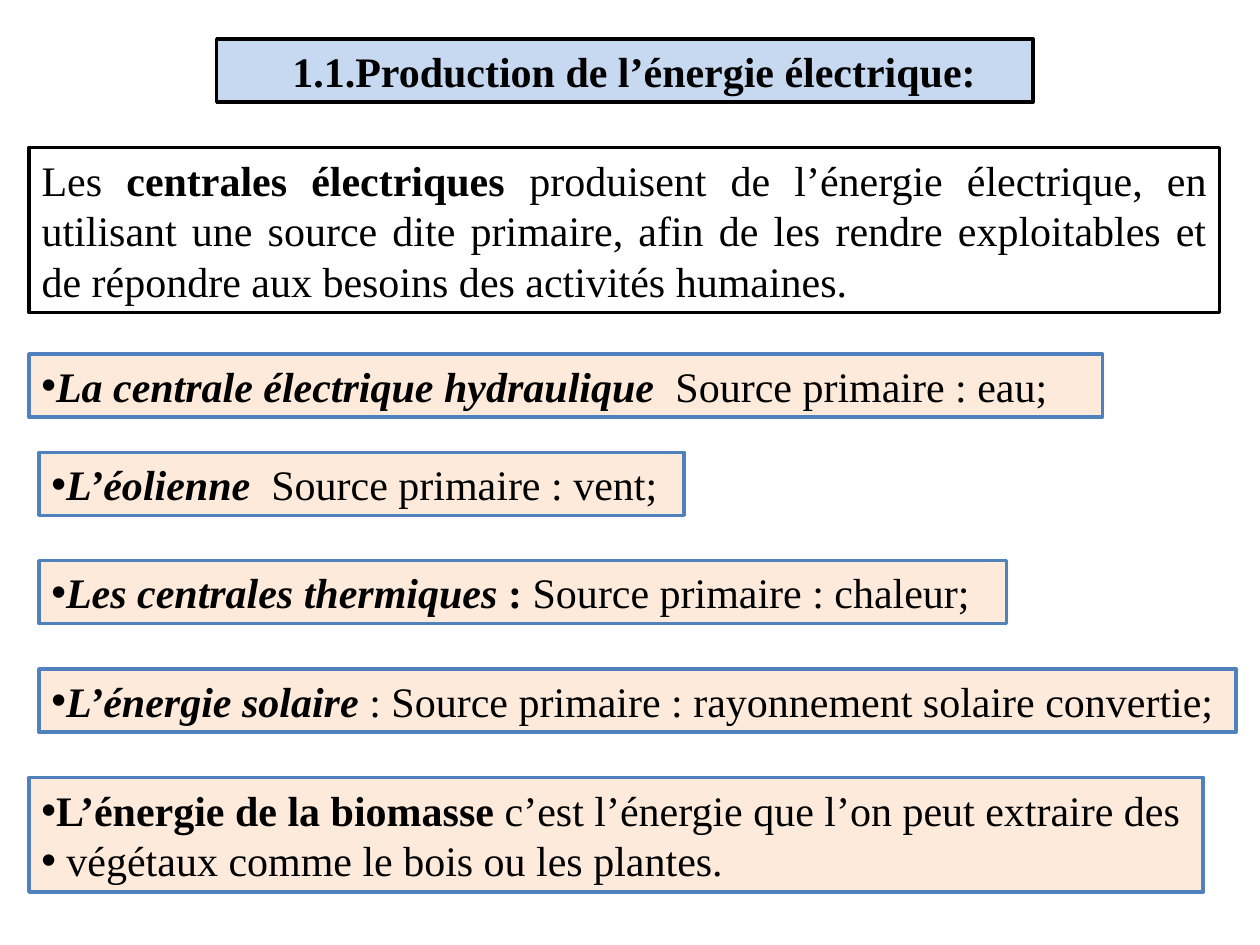
from lxml.etree import SubElement as Sub
from pptx import Presentation
from pptx.dml.color import RGBColor as RGB
from pptx.enum.text import MSO_ANCHOR as Anchor, MSO_AUTO_SIZE as Auto, PP_ALIGN as Align
from pptx.oxml.ns import qn
from pptx.util import Inches, Pt

COLORS = {"ink": "000000", "head": "C6D9F1", "paper": "FFFFFF",
          "card": "FDEADA", "edge": "4F81BD"}


class Deck:
    font, size, border = "Times New Roman", Pt(24), Pt(2)

    def __init__(self, slide):
        self.slide = slide

    def color(self, name):
        return RGB.from_string(COLORS[name])

    def frame(self, shape, box, fill, edge):
        """Place a shape and give it fill, border and text settings."""
        shape.left, shape.top, shape.width, shape.height = map(Inches, box)
        shape.fill.solid()
        shape.fill.fore_color.rgb = self.color(fill)
        shape.line.color.rgb = self.color(edge)
        shape.line.width = self.border
        text = shape.text_frame
        text.word_wrap = True
        text.auto_size = Auto.NONE
        text.vertical_anchor = Anchor.MIDDLE
        return text

    def put(self, para, runs, bullet=None, indent=0, align=Align.LEFT):
        """Fill a paragraph with (text, style) runs; style uses b and i."""
        para.alignment = align
        para.space_before = Pt(0)
        props = para._p.get_or_add_pPr()
        props.set("marL", str(Inches(indent)))
        props.set("indent", "0")
        if bullet == "•":
            Sub(props, qn("a:buFont"), typeface="Arial")
            Sub(props, qn("a:buChar"), char=bullet)
        elif bullet:
            Sub(props, qn("a:buAutoNum"), type=bullet)
        else:
            Sub(props, qn("a:buNone"))
        for words, style in runs:
            run = para.add_run()
            run.text = words
            font = run.font
            font.name, font.size = self.font, self.size
            font.bold, font.italic = "b" in style, "i" in style
            font.color.rgb = self.color("ink")

    def title(self, box, words):
        text = self.frame(self.slide.shapes.title, box, "head", "ink")
        self.put(text.paragraphs[0], [(words, "b")], "arabicPeriod", 0.5)

    def intro(self, box, runs):
        text = self.frame(self.slide.placeholders[1], box, "paper", "ink")
        self.put(text.paragraphs[0], runs, align=Align.JUSTIFY)

    def card(self, box, lines):
        shape = self.slide.shapes.add_textbox(*map(Inches, box))
        text = self.frame(shape, box, "card", "edge")
        for n, runs in enumerate(lines):
            para = text.add_paragraph() if n else text.paragraphs[0]
            self.put(para, runs, "•")


def main():
    prs = Presentation()
    prs.slide_width, prs.slide_height = Inches(10), Inches(7.5)
    deck = Deck(prs.slides.add_slide(prs.slide_layouts[1]))

    # Heading and definition
    deck.title((1.72, 0.31, 6.48, 0.5), "1.Production de l’énergie électrique:")
    deck.intro((0.23, 1.17, 9.45, 1.31), [
        ("Les ", ""), ("centrales électriques ", "b"),
        ("produisent de l’énergie électrique, en utilisant une source dite "
         "primaire, afin de les rendre exploitables et de répondre aux "
         "besoins des activités humaines.", "")])

    # Kinds of power station
    cards = [
        ((0.23, 2.81, 8.52, 0.5), [[("La centrale électrique hydraulique", "bi"),
                                    ("  Source primaire : eau;", "")]]),
        ((0.31, 3.59, 5.12, 0.5), [[("L’éolienne", "bi"),
                                    ("  Source primaire : vent;", "")]]),
        ((0.31, 4.45, 7.68, 0.5), [[("Les centrales thermiques", "bi"), (" : ", "b"),
                                    ("Source primaire : chaleur;", "")]]),
        ((0.31, 5.31, 9.5, 0.5), [[("L’énergie solaire ", "bi"),
                                   (": Source primaire : rayonnement solaire convertie;", "")]]),
        ((0.23, 6.17, 9.32, 0.91), [[("L’énergie de la biomasse", "b"),
                                     (" c’est l’énergie que l’on peut extraire des", "")],
                                    [(" végétaux comme le bois ou les plantes.", "")]]),
    ]
    for box, lines in cards:
        deck.card(box, lines)

    prs.save("out.pptx")


if __name__ == "__main__":
    main()
